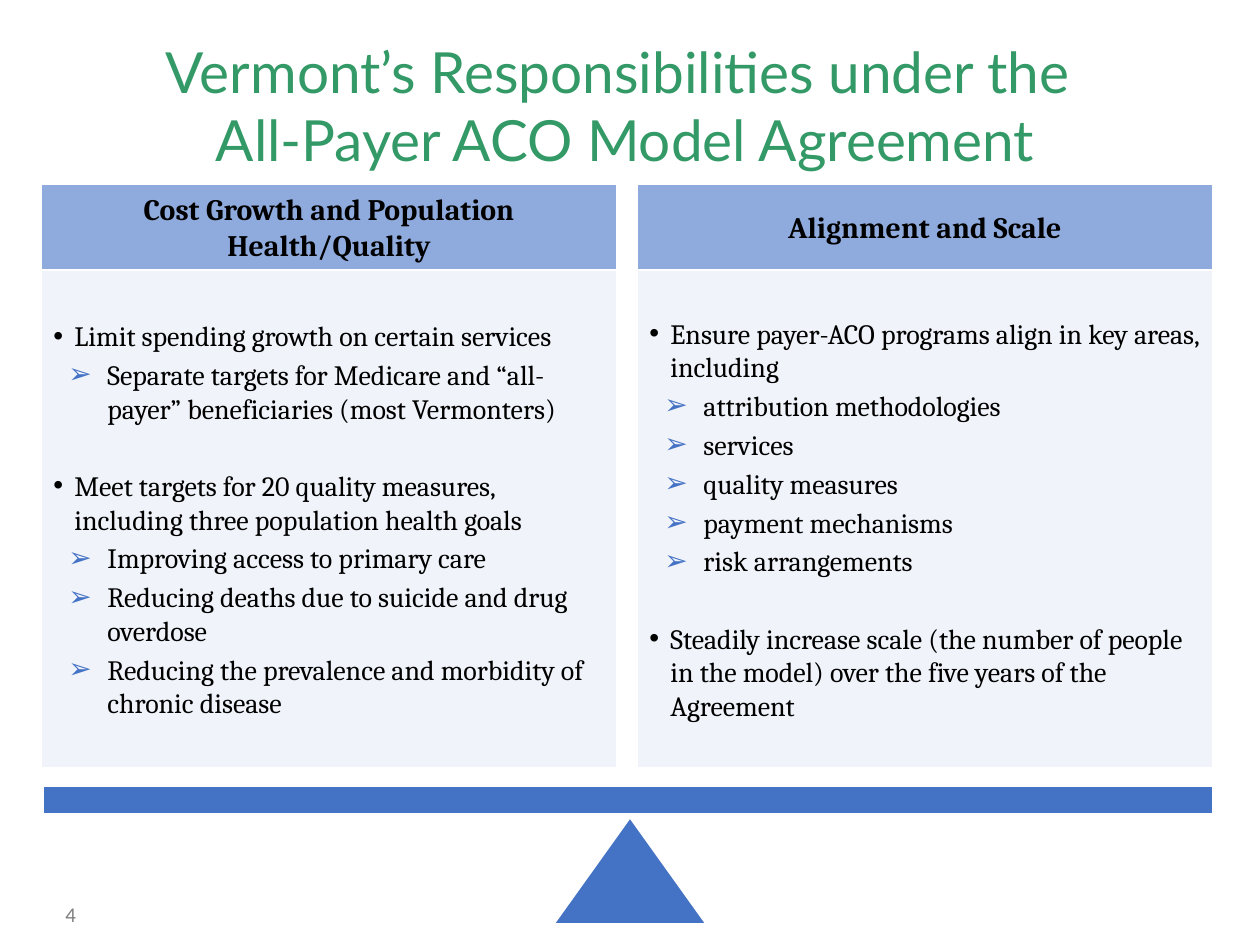
from typing import NamedTuple

from lxml.etree import SubElement
from pptx import Presentation
from pptx.dml.color import RGBColor
from pptx.enum.shapes import MSO_SHAPE as Shape
from pptx.enum.text import MSO_ANCHOR as Anchor, PP_ALIGN as Align
from pptx.oxml.ns import qn
from pptx.util import Emu, Pt

PX = 914400 / 126
BLUE = "4472C4"


class Bullet(NamedTuple):
    char: str
    margin: int
    hang: int
    color: str


class Item(NamedTuple):
    text: str
    bullet: Bullet
    before: int = 3


class Column(NamedTuple):
    heading: str
    items: list[Item]


DOT = Bullet("•", 21, 21, "000000")
ARROW = Bullet("➢", 54, 39, BLUE)
GROUP_GAP = 25

COLUMNS = [
    Column("Cost Growth and Population Health/Quality", [
        Item("Limit spending growth on certain services", DOT),
        Item("Separate targets for Medicare and “all-payer” beneficiaries (most Vermonters)", ARROW),
        Item("Meet targets for 20 quality measures, including three population health goals", DOT, GROUP_GAP),
        Item("Improving access to primary care", ARROW),
        Item("Reducing deaths due to suicide and drug overdose", ARROW),
        Item("Reducing the prevalence and morbidity of chronic disease", ARROW),
    ]),
    Column("Alignment and Scale", [
        Item("Ensure payer-ACO programs align in key areas, including", DOT),
        Item("attribution methodologies", ARROW),
        Item("services", ARROW),
        Item("quality measures", ARROW),
        Item("payment mechanisms", ARROW),
        Item("risk arrangements", ARROW),
        Item("Steadily increase scale (the number of people in the model) "
             "over the five years of the Agreement", DOT, GROUP_GAP),
    ]),
]


def px(n: int) -> Emu:
    """Turn pixels into EMU."""
    return Emu(round(n * PX))


def rgb(color: str) -> RGBColor:
    """Turn a hex string into a colour."""
    return RGBColor.from_string(color)


def add_bullet(p, bullet: Bullet) -> None:
    """Give a paragraph its bullet and hanging indent."""
    pPr = p._p.get_or_add_pPr()
    pPr.set("marL", str(px(bullet.margin)))
    pPr.set("indent", str(-px(bullet.hang)))
    SubElement(SubElement(pPr, qn("a:buClr")), qn("a:srgbClr"), val=bullet.color)
    SubElement(pPr, qn("a:buFont"), typeface="Arial")
    SubElement(pPr, qn("a:buChar"), char=bullet.char)


def write(p, text: str, *, size: float, font: str = "Cambria", color: str = "000000",
          bold: bool = False, align=Align.LEFT, before: int = 0) -> None:
    """Write formatted text into a paragraph, breaking lines at newlines."""
    p.alignment = align
    p.space_before = Pt(before)
    for i, line in enumerate(text.split("\n")):
        if i:
            p.add_line_break()
        r = p.add_run()
        r.text = line
        r.font.size, r.font.name, r.font.bold = Pt(size), font, bold
        r.font.color.rgb = rgb(color)


def add_shape(slide, kind, x: int, y: int, w: int, h: int, fill: str, line: float):
    """Draw a filled shape with a white outline and return its text frame."""
    sp = slide.shapes.add_shape(kind, px(x), px(y), px(w), px(h))
    sp.shadow.inherit = False
    sp.fill.solid()
    sp.fill.fore_color.rgb = rgb(fill)
    sp.line.color.rgb = rgb("FFFFFF")
    sp.line.width = Pt(line)
    tf = sp.text_frame
    tf.word_wrap, tf.vertical_anchor = True, Anchor.MIDDLE
    return tf


def add_text(slide, x: int, y: int, w: int, h: int, text: str, anchor, **fmt) -> None:
    """Add a text box with one paragraph."""
    tf = slide.shapes.add_textbox(px(x), px(y), px(w), px(h)).text_frame
    tf.word_wrap, tf.vertical_anchor = True, anchor
    write(tf.paragraphs[0], text, **fmt)


def add_column(slide, x: int, column: Column) -> None:
    """Draw a heading with its bulleted panel below."""
    top, width, head, body = 184, 576, 86, 498
    tf = add_shape(slide, Shape.RECTANGLE, x, top, width, head, "8FAADC", 0.75)
    write(tf.paragraphs[0], column.heading, size=17, bold=True, align=Align.CENTER)
    tf = add_shape(slide, Shape.RECTANGLE, x, top + head, width, body, "F0F4FA", 0.75)
    for i, item in enumerate(column.items):
        p = tf.add_paragraph() if i else tf.paragraphs[0]
        add_bullet(p, item.bullet)
        write(p, item.text, size=16, before=item.before if i else 0)


def main() -> None:
    """Build the slide and save it."""
    prs = Presentation()
    prs.slide_width, prs.slide_height = px(1260), px(945)
    slide = prs.slides.add_slide(prs.slide_layouts[6])
    add_text(slide, 53, 895, 294, 50, "4", Anchor.TOP, size=12, font="Calibri", color="808080")
    add_text(slide, 58, 26, 1134, 158,
             "Vermont’s Responsibilities under the \nAll-Payer ACO Model Agreement",
             Anchor.MIDDLE, size=32.4, font="Lato", color="339966", align=Align.CENTER)
    for i, column in enumerate(COLUMNS):
        add_column(slide, 41 + 596 * i, column)
    add_shape(slide, Shape.RECTANGLE, 42, 785, 1172, 30, BLUE, 2)
    add_shape(slide, Shape.ISOSCELES_TRIANGLE, 552, 816, 156, 109, BLUE, 2)
    prs.save("out.pptx")


if __name__ == "__main__":
    main()
